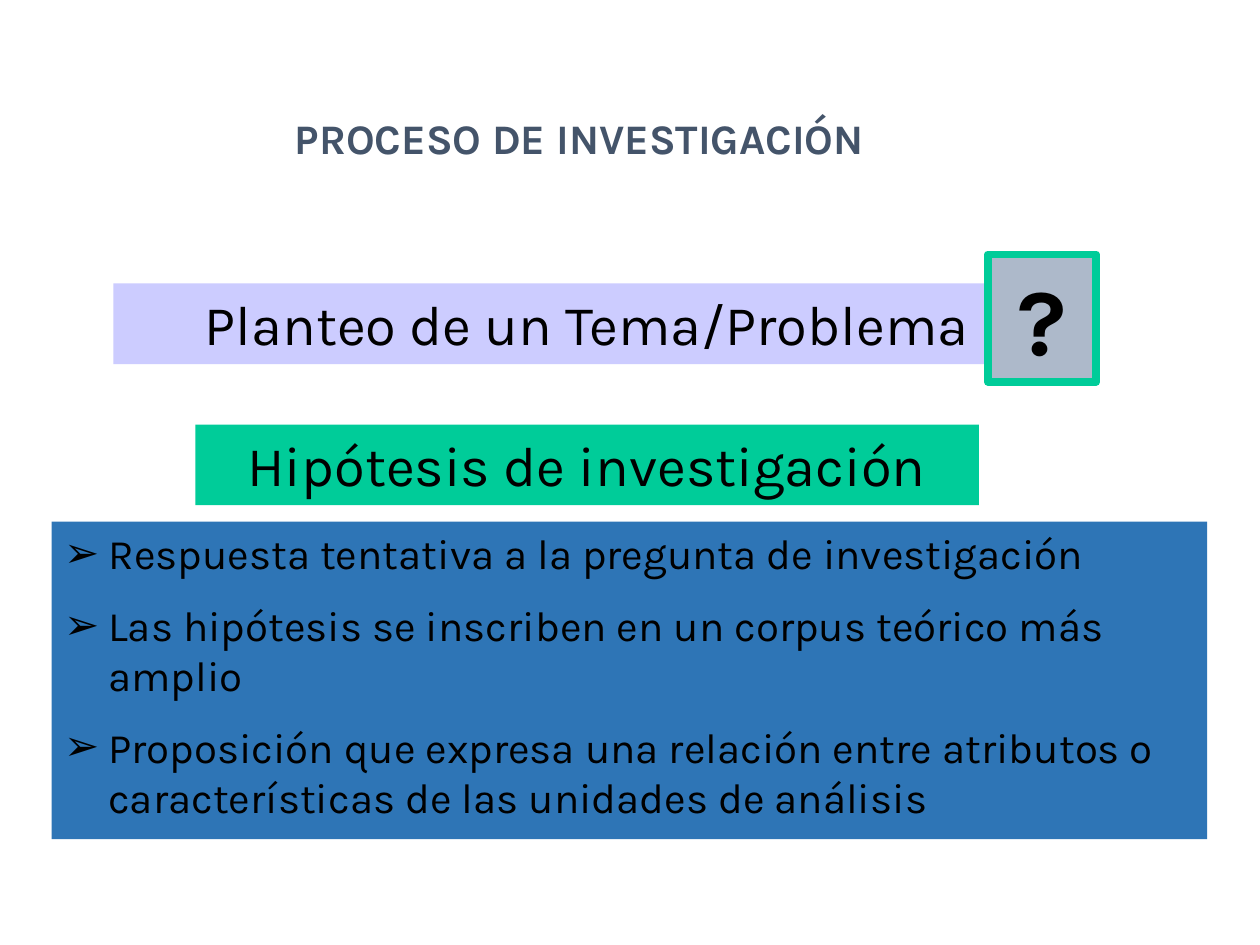
"""Build the slide on the research process and its hypothesis."""
import pptx
import pptx.dml.color
import pptx.enum.shapes
import pptx.enum.text
import pptx.oxml.ns
import pptx.util
from lxml import etree

RGBColor = pptx.dml.color.RGBColor
BLACK = RGBColor(0x00, 0x00, 0x00)
SLATE = RGBColor(0x44, 0x54, 0x6A)
LAVENDER = RGBColor(0xCC, 0xCC, 0xFF)
GREEN = RGBColor(0x00, 0xCC, 0x99)
GRAY = RGBColor(0xAD, 0xB9, 0xCA)
BLUE = RGBColor(0x2E, 0x75, 0xB6)

COLUMNS, ROWS = 100, 75
LEFT = pptx.enum.text.PP_ALIGN.LEFT
CENTER = pptx.enum.text.PP_ALIGN.CENTER


class Deck:
    """Hold the style and the current slide, measured in grid columns and rows."""

    font = "Karla"
    indent = pptx.util.Inches(0.35)

    def __init__(self, prs):
        self.prs = prs
        self.s = prs.slides.add_slide(prs.slide_layouts[1])

    def box(self, left, top, width, height):
        """Turn grid units into slide lengths."""
        col = self.prs.slide_width / COLUMNS
        row = self.prs.slide_height / ROWS
        return [int(n) for n in (left * col, top * row, width * col, height * row)]

    def place(self, sp, area):
        """Move a placeholder to an area of the grid."""
        sp.left, sp.top, sp.width, sp.height = self.box(*area)

    def set_text(self, sp, text, size, color=BLACK, bold=False, align=CENTER):
        """Set and format the text of a shape."""
        tf = sp.text_frame
        tf.text = text
        tf.word_wrap = True
        tf.auto_size = pptx.enum.text.MSO_AUTO_SIZE.NONE
        tf.vertical_anchor = pptx.enum.text.MSO_ANCHOR.TOP
        for p in tf.paragraphs:
            p.alignment = align
            for r in p.runs:
                r.font.name = self.font
                r.font.size = pptx.util.Pt(size)
                r.font.bold = bold
                r.font.color.rgb = color

    def title(self, area, text):
        """Fill the title placeholder."""
        sp = self.s.shapes.title
        self.place(sp, area)
        self.set_text(sp, text, 24, SLATE, bold=True, align=LEFT)

    def bullets(self, area, items, fill):
        """Fill the body placeholder with an arrow list."""
        sp = self.s.placeholders[1]
        self.place(sp, area)
        sp.fill.solid()
        sp.fill.fore_color.rgb = fill
        self.set_text(sp, "\n".join(items), 24, align=LEFT)
        for p in sp.text_frame.paragraphs:
            p.space_before = pptx.util.Pt(12)
            pPr = p._p.get_or_add_pPr()
            pPr.set("marL", str(self.indent))
            pPr.set("indent", str(-self.indent))
            etree.SubElement(pPr, pptx.oxml.ns.qn("a:buChar")).set("char", "➢")

    def panel(self, area, text, size, fill, line=None, bold=False):
        """Add a filled rectangle with centred text."""
        sp = self.s.shapes.add_shape(
            pptx.enum.shapes.MSO_SHAPE.RECTANGLE, *self.box(*area))
        sp.shadow.inherit = False
        sp.fill.solid()
        sp.fill.fore_color.rgb = fill
        if line is None:
            sp.line.fill.background()
        else:
            sp.line.color.rgb = line
            sp.line.width = pptx.util.Pt(4.5)
        self.set_text(sp, text, size, bold=bold)


def main():
    """Build and save the slide."""
    prs = pptx.Presentation()
    prs.slide_width = pptx.util.Inches(10)
    prs.slide_height = pptx.util.Inches(7.5)
    deck = Deck(prs)
    deck.title((22.4, 8.4, 85.4, 5), "PROCESO DE INVESTIGACIÓN")
    deck.bullets((4.1, 41.4, 91.7, 25.2), [
        "Respuesta tentativa a la pregunta de investigación",
        "Las hipótesis se inscriben en un corpus teórico más amplio",
        "Proposición que expresa una relación entre atributos o "
        "características de las unidades de análisis",
    ], BLUE)
    deck.panel((9, 22.5, 75.2, 6.4), "Planteo de un Tema/Problema", 32, LAVENDER)
    deck.panel((15.5, 33.7, 62.2, 6.4), "Hipótesis de investigación", 32, GREEN)
    deck.panel((78.4, 20.2, 8.6, 10.1), "?", 54, GRAY, line=GREEN, bold=True)
    prs.save("out.pptx")


if __name__ == "__main__":
    main()
